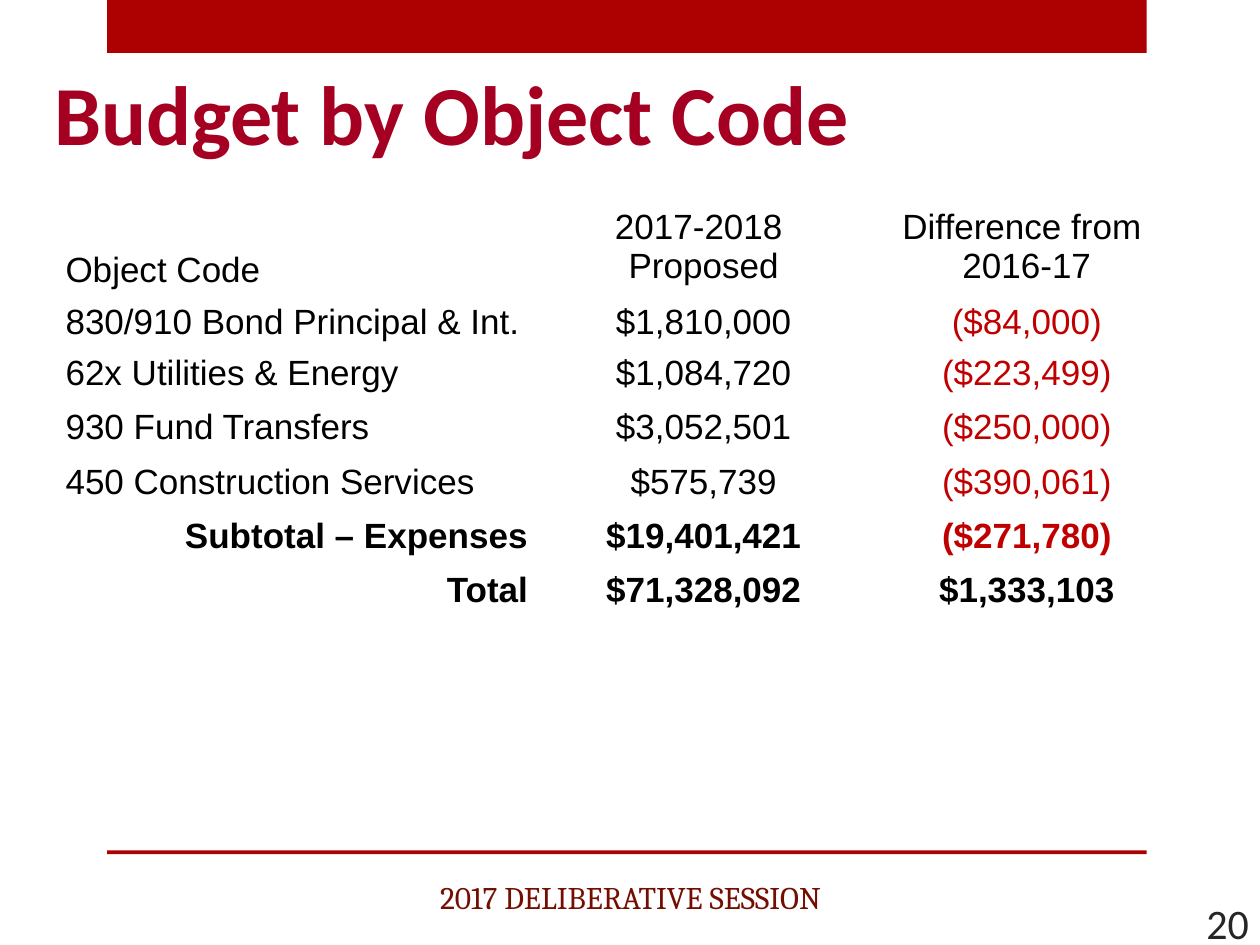
import pptx
import pptx.dml.color
import pptx.enum.shapes
import pptx.enum.text
import pptx.oxml
import pptx.oxml.ns
import pptx.util

Inches = pptx.util.Inches
ALIGN = pptx.enum.text.PP_ALIGN
ANCHOR = pptx.enum.text.MSO_ANCHOR

COLORS = {
    "bar": "AD0101",
    "title": "A50021",
    "footer": "730E00",
    "number": "262626",
    "text": "000000",
    "negative": "C00000",
    "border": "FFFFFF",
}
HEADER = ["Object Code", "2017-2018 \nProposed", "Difference from \n2016-17"]
ROWS = [
    ["830/910 Bond Principal & Int.", "$1,810,000", "($84,000)"],
    ["62x Utilities & Energy", "$1,084,720", "($223,499)"],
    ["930 Fund Transfers", "$3,052,501", "($250,000)"],
    ["450 Construction Services", "$575,739", "($390,061)"],
]
TOTALS = [
    ["Subtotal – Expenses", "$19,401,421", "($271,780)"],
    ["Total", "$71,328,092", "$1,333,103"],
]
COL_WIDTHS = [3.87, 2.59, 2.54]
ROW_HEIGHTS = [0.75, 0.41] + [0.43] * 5


def rgb(name):
    """Return the named palette colour."""
    return pptx.dml.color.RGBColor.from_string(COLORS[name])


def write(tf, text, font, size, color, align=ALIGN.LEFT, bold=False):
    """Write each line of text as a formatted paragraph."""
    for i, line in enumerate(text.split("\n")):
        p = tf.add_paragraph() if i else tf.paragraphs[0]
        p.alignment = align
        r = p.add_run()
        r.text = line
        r.font.name = font
        r.font.size = pptx.util.Pt(size)
        r.font.bold = bold
        r.font.color.rgb = rgb(color)


def place(sp, box):
    """Move a shape to a box given in inches."""
    sp.left, sp.top, sp.width, sp.height = map(Inches, box)


def add_bar(s, box):
    """Add a plain red bar."""
    sp = s.shapes.add_shape(pptx.enum.shapes.MSO_SHAPE.RECTANGLE, *map(Inches, box))
    sp.shadow.inherit = False
    sp.fill.solid()
    sp.fill.fore_color.rgb = rgb("bar")
    sp.line.fill.background()


def add_title(s, box):
    """Fill and format the title placeholder."""
    sp = s.shapes.title
    place(sp, box)
    tf = sp.text_frame
    tf.auto_size = pptx.enum.text.MSO_AUTO_SIZE.NONE
    tf.vertical_anchor = ANCHOR.BOTTOM
    write(tf, "Budget by Object Code", "Calibri", 48, "title", bold=True)


def add_label(s, box, text, font, size, color, align, anchor):
    """Add a one-line text box."""
    tf = s.shapes.add_textbox(*map(Inches, box)).text_frame
    tf.word_wrap = True
    tf.vertical_anchor = anchor
    write(tf, text, font, size, color, align)


def set_borders(cell, bottom):
    """Draw white borders with the given bottom width in points."""
    tc_pr = cell._tc.get_or_add_tcPr()
    for i, (tag, width) in enumerate([("lnL", 1), ("lnR", 1), ("lnT", 1), ("lnB", bottom)]):
        tc_pr.insert(i, pptx.oxml.parse_xml(
            f'<a:{tag} {pptx.oxml.ns.nsdecls("a")} w="{pptx.util.Pt(width)}">'
            f'<a:solidFill><a:srgbClr val="{COLORS["border"]}"/></a:solidFill></a:{tag}>'))


def add_budget_table(s, box):
    """Add the budget table with its header and totals."""
    data = [HEADER] + ROWS + TOTALS
    table = s.shapes.add_table(len(data), len(HEADER), *map(Inches, box)).table
    table.first_row = table.horz_banding = False
    for col, width in zip(table.columns, COL_WIDTHS):
        col.width = Inches(width)
    for i, (row, height) in enumerate(zip(table.rows, ROW_HEIGHTS)):
        row.height = Inches(height)
        total = data[i] in TOTALS
        for j, (cell, text) in enumerate(zip(row.cells, data[i])):
            cell.fill.background()
            set_borders(cell, 1 if i else 3)
            if j:
                align = ALIGN.CENTER
            else:
                align = ALIGN.RIGHT if total else ALIGN.LEFT
            color = "negative" if text.startswith("(") else "text"
            write(cell.text_frame, text, "Arial", 20, color, align, total)
    table.cell(0, 0).vertical_anchor = ANCHOR.BOTTOM


def main():
    """Build and save the slide."""
    prs = pptx.Presentation()
    prs.slide_width, prs.slide_height = Inches(10), Inches(7.5)
    s = prs.slides.add_slide(prs.slide_layouts[5])
    add_bar(s, (0.85, 0, 8.25, 0.42))
    add_bar(s, (0.85, 6.75, 8.25, 0.03))
    add_budget_table(s, (0.42, 1.6, sum(COL_WIDTHS), sum(ROW_HEIGHTS)))
    add_title(s, (0.33, 0.82, 9.51, 0.52))
    add_label(s, (0.17, 6.92, 9.67, 0.4), "2017 DELIBERATIVE SESSION",
              "Cambria", 18, "footer", ALIGN.CENTER, ANCHOR.TOP)
    add_label(s, (9.18, 7.12, 0.83, 0.4), "20",
              "Calibri", 24, "number", ALIGN.RIGHT, ANCHOR.MIDDLE)
    prs.save("out.pptx")


if __name__ == "__main__":
    main()
